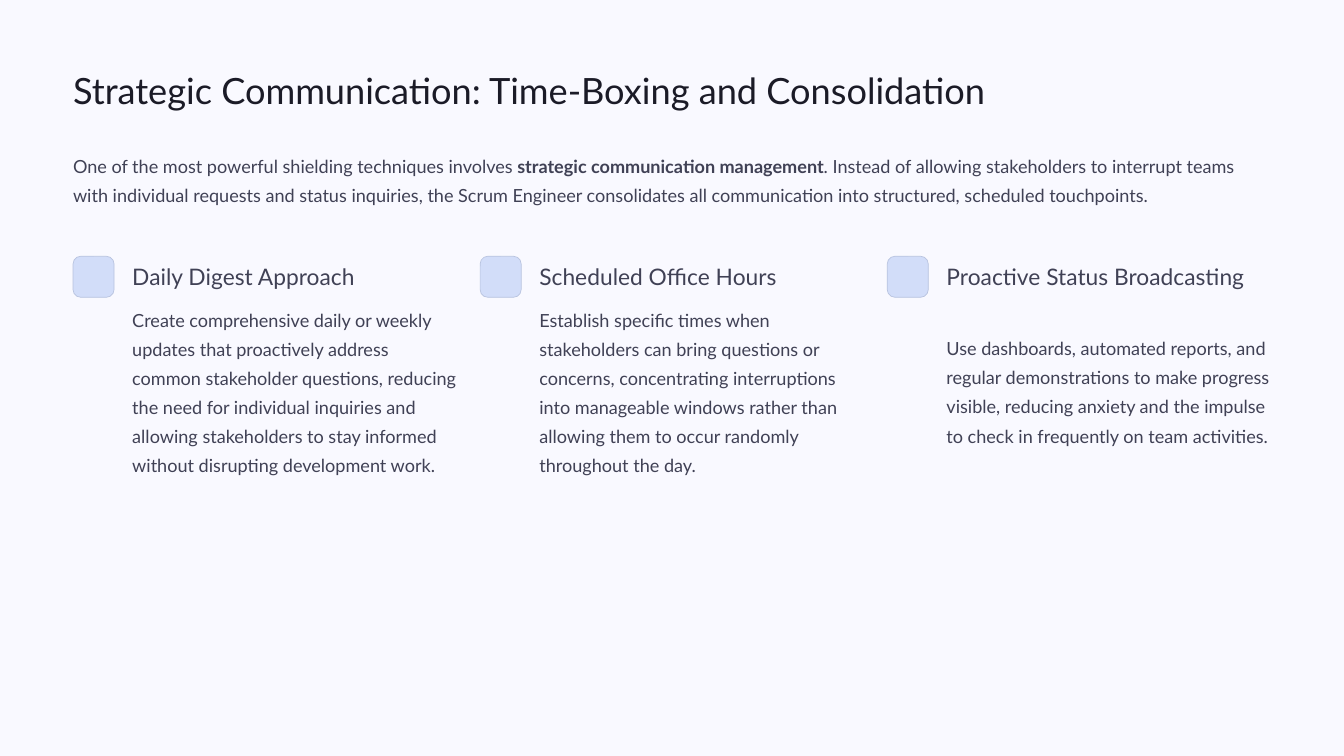
from pptx import Presentation
from pptx.dml.color import RGBColor
from pptx.enum.shapes import MSO_SHAPE
from pptx.enum.text import MSO_ANCHOR, MSO_AUTO_SIZE, PP_ALIGN
from pptx.util import Cm, Pt

ROUNDED = MSO_SHAPE.ROUNDED_RECTANGLE
TOP = MSO_ANCHOR.TOP
LEFT = PP_ALIGN.LEFT
FIXED_SIZE = MSO_AUTO_SIZE.NONE

FONT = "Lato"
PAPER = RGBColor(0xF9, 0xF9, 0xFF)
INK = RGBColor(0x1B, 0x1B, 0x27)
SLATE = RGBColor(0x40, 0x41, 0x55)
TILE_FILL = RGBColor(0xD2, 0xDD, 0xF9)
TILE_EDGE = RGBColor(0xB8, 0xC3, 0xDF)

MARGIN = 2.21
CONTENT_WIDTH = 36.22
COLUMN_TOP = 7.75
COLUMN_WIDTH = 11.62
COLUMN_STEP = 12.31
TILE_SIZE = 1.24
TEXT_INDENT = 1.79
HEADING_ROW = 0.86
BODY_ROW = 0.88

TITLE = "Strategic Communication: Time-Boxing and Consolidation"
INTRO = [
    ("One of the most powerful shielding techniques involves ", False),
    ("strategic communication management", True),
    (". Instead of allowing stakeholders to interrupt teams with individual "
     "requests and status inquiries, the Scrum Engineer consolidates all "
     "communication into structured, scheduled touchpoints.", False),
]
# Heading, rows kept for the heading, body, rows kept for the body
TECHNIQUES = [
    ("Daily Digest Approach", 1,
     "Create comprehensive daily or weekly updates that proactively address "
     "common stakeholder questions, reducing the need for individual inquiries "
     "and allowing stakeholders to stay informed without disrupting "
     "development work.", 8),
    ("Scheduled Office Hours", 1,
     "Establish specific times when stakeholders can bring questions or "
     "concerns, concentrating interruptions into manageable windows rather "
     "than allowing them to occur randomly throughout the day.", 7),
    ("Proactive Status Broadcasting", 2,
     "Use dashboards, automated reports, and regular demonstrations to make "
     "progress visible, reducing anxiety and the impulse to check in "
     "frequently on team activities.", 5),
]


def write(frame, spans, size, spacing, color, wrap=True):
    """Fill a text frame with one paragraph of (text, bold) spans."""
    frame.margin_left = frame.margin_right = 0
    frame.margin_top = frame.margin_bottom = 0
    frame.word_wrap = wrap
    frame.auto_size = FIXED_SIZE
    frame.vertical_anchor = TOP
    para = frame.paragraphs[0]
    para.alignment = LEFT
    para.line_spacing = Pt(spacing)
    para.font.name = FONT
    para.font.size = Pt(size)
    para.font.color.rgb = color
    for text, bold in spans:
        span = para.add_run()
        span.text = text
        if bold:
            span.font.bold = True


def add_text(page, left, top, width, height, spans, size, spacing):
    box = page.shapes.add_textbox(Cm(left), Cm(top), Cm(width), Cm(height))
    write(box.text_frame, spans, size, spacing, SLATE)


def add_title(page, left, top, width, height):
    title = page.shapes.title
    title.left, title.top = Cm(left), Cm(top)
    title.width, title.height = Cm(width), Cm(height)
    write(title.text_frame, [(TITLE, False)], 31, 39, INK, wrap=False)


def add_technique(page, left, top, width, technique):
    heading, heading_rows, body, body_rows = technique

    # Icon tile
    tile = page.shapes.add_shape(
        ROUNDED, Cm(left), Cm(top), Cm(TILE_SIZE), Cm(TILE_SIZE))
    tile.adjustments[0] = 0.187
    tile.shadow.inherit = False
    tile.fill.solid()
    tile.fill.fore_color.rgb = TILE_FILL
    tile.line.color.rgb = TILE_EDGE
    tile.line.width = Pt(0.6)

    # Heading and body beside the tile
    text_left = left + TEXT_INDENT
    text_width = width - TEXT_INDENT
    heading_top = top + 0.18
    heading_height = heading_rows * HEADING_ROW
    add_text(page, text_left, heading_top, text_width, heading_height,
             [(heading, False)], 19.5, 24)
    add_text(page, text_left, heading_top + heading_height + 0.33, text_width,
             body_rows * BODY_ROW, [(body, False)], 15.5, 25)


def main():
    deck = Presentation()
    deck.slide_width, deck.slide_height = Cm(40.64), Cm(22.86)
    page = deck.slides.add_slide(deck.slide_layouts[5])
    page.background.fill.solid()
    page.background.fill.fore_color.rgb = PAPER

    # Title and introduction
    add_title(page, MARGIN, 2.01, 31.95, 1.37)
    add_text(page, MARGIN, 4.47, CONTENT_WIDTH, 2.64, INTRO, 15.5, 25)

    # Three techniques side by side
    for index, technique in enumerate(TECHNIQUES):
        add_technique(page, MARGIN + index * COLUMN_STEP, COLUMN_TOP,
                      COLUMN_WIDTH, technique)

    deck.save("out.pptx")


if __name__ == "__main__":
    main()
